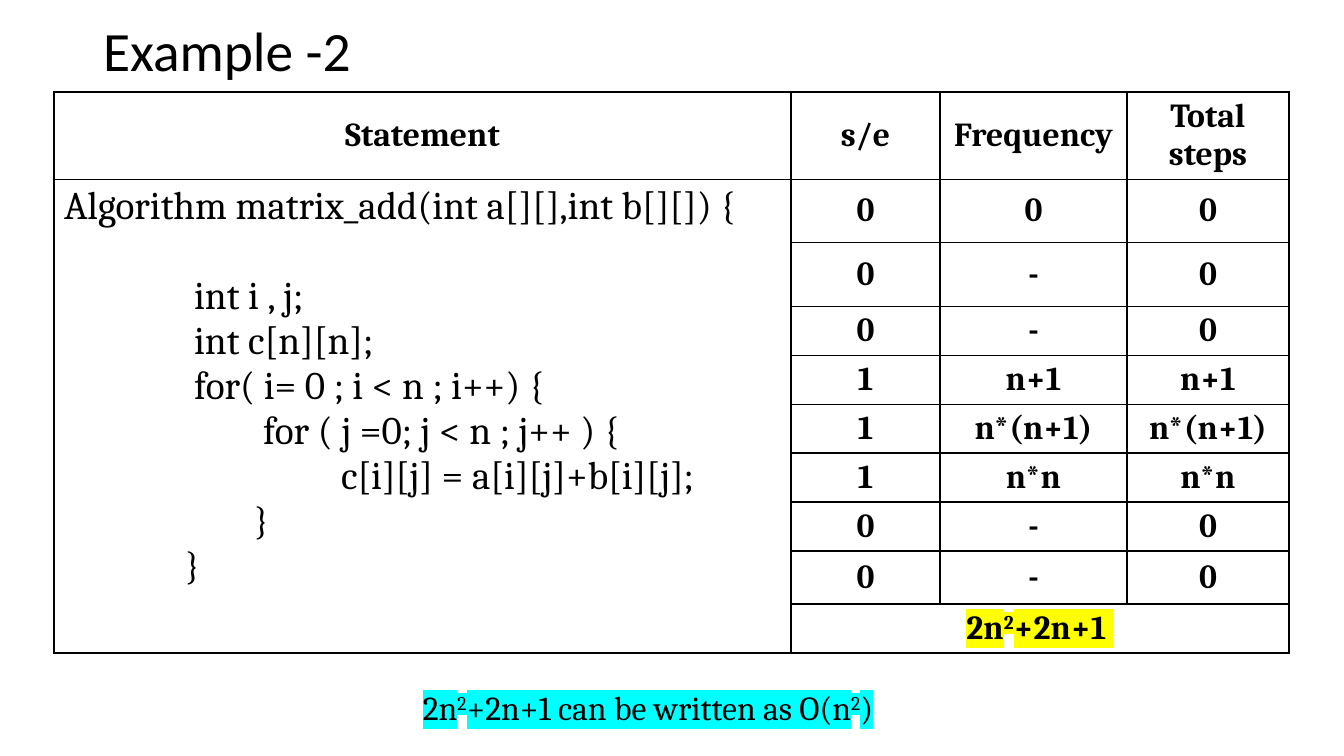
from lxml import etree
from pptx import Presentation
from pptx.dml.color import RGBColor
from pptx.enum.text import MSO_ANCHOR, PP_ALIGN
from pptx.oxml.ns import qn
from pptx.util import Pt

CENTER, LEFT = PP_ALIGN.CENTER, PP_ALIGN.LEFT
MIDDLE, TOP = MSO_ANCHOR.MIDDLE, MSO_ANCHOR.TOP
PX = 914400 / 100.8
BLACK, YELLOW, CYAN = "000000", "FFFF00", "00FFFF"


def px(*lengths):
    return [round(length * PX) for length in lengths]


def write(paragraph, text, size=24, font="Cambria", color=BLACK, bold=False,
          align=LEFT, highlight=None, indent=0, after=0):
    """Fill a paragraph; every odd part between ^ marks is superscript."""
    paragraph.alignment = align
    paragraph.space_after = Pt(after)
    if indent:
        properties = paragraph._p.get_or_add_pPr()
        properties.set("marL", str(px(indent)[0]))
        properties.set("indent", "0")
    for i, part in enumerate(text.split("^")):
        run = paragraph.add_run()
        run.text = part
        run.font.size, run.font.name, run.font.bold = Pt(size), font, bold
        run.font.color.rgb = RGBColor.from_string(color)
        run_properties = run._r.get_or_add_rPr()
        if i % 2:
            run_properties.set("baseline", "30000")
        if highlight:
            mark = etree.Element(qn("a:highlight"))
            etree.SubElement(mark, qn("a:srgbClr"), val=highlight)
            run_properties.find(qn("a:solidFill")).addnext(mark)


prs = Presentation()
prs.slide_width, prs.slide_height = px(1344, 756)
slide = prs.slides.add_slide(prs.slide_layouts[5])

# Title
title = slide.shapes.title
title.left, title.top, title.width, title.height = px(93, 17, 1159, 74)
title.text_frame.vertical_anchor = MIDDLE
title_line = title.text_frame.paragraphs[0]
title_line.line_spacing = 0.9
write(title_line, "Example -2", size=39.6, font="Calibri")

# Step count table
column_widths = [737, 149, 187, 162]
row_heights = [87, 63, 64, 48, 49, 49, 49, 49, 53, 49]
steps = slide.shapes.add_table(len(row_heights), len(column_widths),
                               *px(54, 92, sum(column_widths), sum(row_heights))).table
steps.first_row = steps.horz_banding = False
for column, width in zip(steps.columns, px(*column_widths)):
    column.width = width
for row, height in zip(steps.rows, px(*row_heights)):
    row.height = height

# Cell borders
for cell in steps.iter_cells():
    cell.fill.background()
    cell.vertical_anchor = MIDDLE
    for i, side in enumerate(("lnL", "lnR", "lnT", "lnB")):
        border = etree.Element(qn(f"a:{side}"), w=str(Pt(1)))
        fill = etree.SubElement(border, qn("a:solidFill"))
        etree.SubElement(fill, qn("a:srgbClr"), val=BLACK)
        cell._tc.get_or_add_tcPr().insert(i, border)

# Header and counts
for c, heading in enumerate(["Statement", "s/e", "Frequency", "Total steps"]):
    write(steps.cell(0, c).text_frame.paragraphs[0], heading, bold=True, align=CENTER)
counts = [
    ("0", "0", "0"),
    ("0", "-", "0"),
    ("0", "-", "0"),
    ("1", "n+1", "n+1"),
    ("1", "n*(n+1)", "n*(n+1)"),
    ("1", "n*n", "n*n"),
    ("0", "-", "0"),
    ("0", "-", "0"),
]
for r, values in enumerate(counts, 1):
    for c, value in enumerate(values, 1):
        write(steps.cell(r, c).text_frame.paragraphs[0], value, bold=True, align=CENTER)

# Total across the count columns
total = steps.cell(9, 1)
total.merge(steps.cell(9, 3))
write(total.text_frame.paragraphs[0], "2n^2^+2n+1 ", bold=True, align=CENTER,
      highlight=YELLOW)

# Algorithm: statement, indent, space after
algorithm = steps.cell(1, 0)
algorithm.merge(steps.cell(9, 0))
algorithm.vertical_anchor = TOP
statements = [
    ("Algorithm matrix_add(int a[][],int b[][]) {", 0, 32),
    ("int i , j;", 130, 0),
    ("int c[n][n];", 130, 0),
    ("for( i= 0 ; i < n ; i++) {", 130, 0),
    ("for ( j =0; j < n ; j++ ) {", 199, 0),
    ("c[i][j] = a[i][j]+b[i][j];", 277, 0),
    ("}", 190, 0),
    ("}", 121, 0),
]
for i, (statement, indent, after) in enumerate(statements):
    frame = algorithm.text_frame
    line = frame.add_paragraph() if i else frame.paragraphs[0]
    write(line, statement, size=28, indent=indent, after=after)

# Conclusion
conclusion = slide.shapes.add_textbox(*px(413, 682, 506, 50)).text_frame
conclusion.word_wrap = False
write(conclusion.paragraphs[0], "2n^2^+2n+1 can be written as O(n^2^)", highlight=CYAN)

prs.save("out.pptx")
